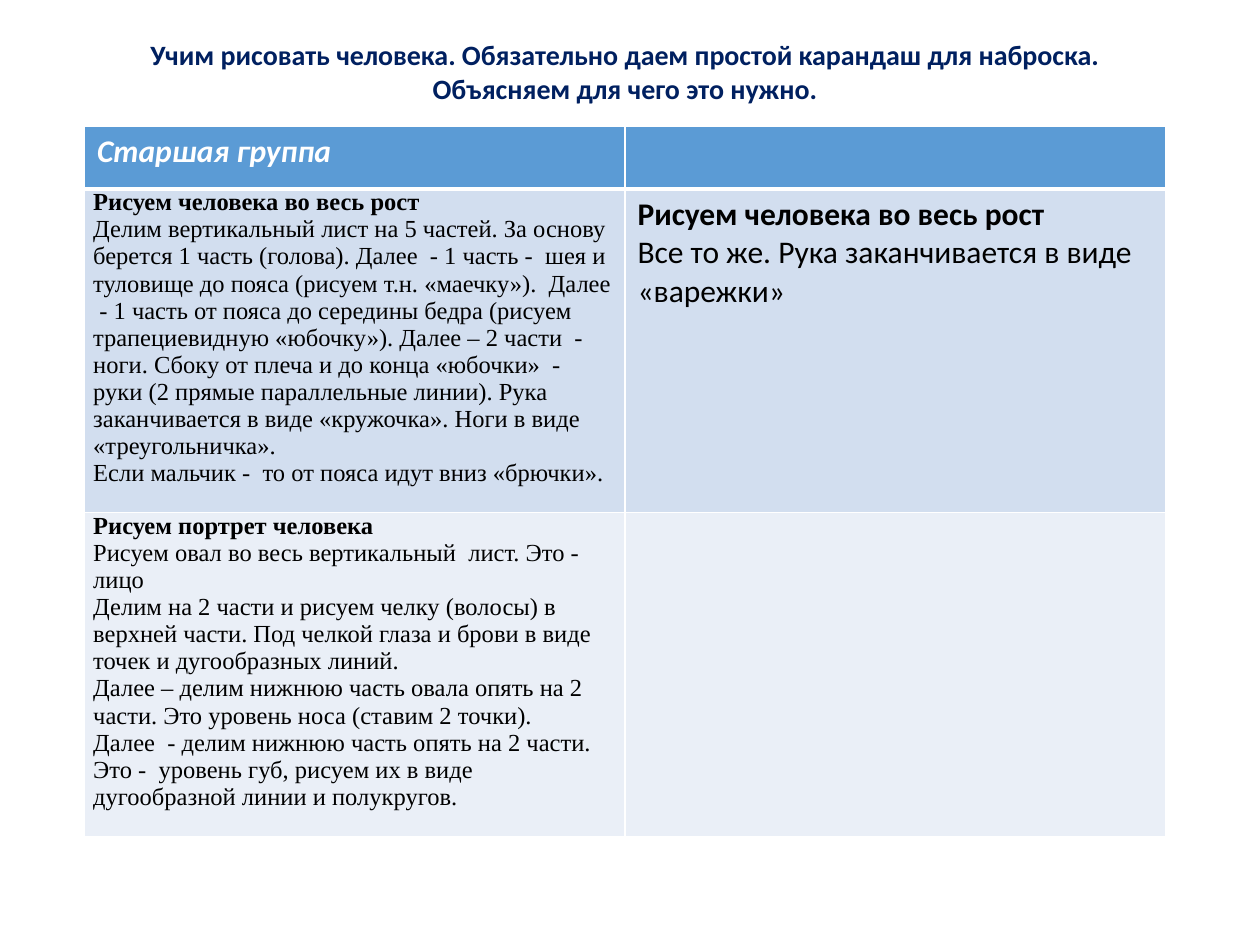
import pptx
import pptx.dml.color
import pptx.enum.text
import pptx.oxml
import pptx.util
from pptx.oxml.ns import nsdecls

WIDTH, HEIGHT = 10, 7.5
TITLE = ("Учим рисовать человека. Обязательно даем простой карандаш для наброска. "
         "Объясняем для чего это нужно.")
FULL_HEIGHT = "Рисуем человека во весь рост"
TITLE_FORMAT = {"name": "Calibri", "size": 16, "color": "002060", "bold": True}
HEAD_FORMAT = {"name": "Calibri", "size": 18, "color": "FFFFFF", "bold": True, "italic": True}
NOTE_FORMAT = {"name": "Calibri", "size": 18, "color": "000000", "bold": False}
LESSON_FORMAT = {"name": "Times New Roman", "size": 14, "color": "000000", "bold": False}
TIGHT = {"margin_left": 0.07, "margin_right": 0.07, "margin_top": 0, "margin_bottom": 0}
ROWS = [
    {"height": 0.5, "fill": "5B9BD5", "top": 1, "bottom": 3, "cells": [
        (["Старшая группа"], HEAD_FORMAT, {}),
        ([], HEAD_FORMAT, {}),
    ]},
    {"height": 2.36, "fill": "D2DEEF", "top": 3, "bottom": 1, "cells": [
        ([FULL_HEIGHT,
          "Делим вертикальный лист на 5 частей. За основу берется 1 часть (голова). "
          "Далее  - 1 часть -  шея и туловище до пояса (рисуем т.н. «маечку»).  "
          "Далее  - 1 часть от пояса до середины бедра (рисуем трапециевидную «юбочку»). "
          "Далее – 2 части  - ноги. Сбоку от плеча и до конца «юбочки»  -  "
          "руки (2 прямые параллельные линии). Рука заканчивается в виде «кружочка». "
          "Ноги в виде «треугольничка».",
          "Если мальчик -  то от пояса идут вниз «брючки»."], LESSON_FORMAT, TIGHT),
        ([FULL_HEIGHT, "Все то же. Рука заканчивается в виде «варежки»"], NOTE_FORMAT, {}),
    ]},
    {"height": 2.36, "fill": "EAEFF7", "top": 1, "bottom": 1, "cells": [
        (["Рисуем портрет человека",
          "Рисуем овал во весь вертикальный  лист. Это -  лицо",
          "Делим на 2 части и рисуем челку (волосы) в верхней части. "
          "Под челкой глаза и брови в виде точек и дугообразных линий.",
          "Далее – делим нижнюю часть овала опять на 2 части. "
          "Это уровень носа (ставим 2 точки).",
          "Далее  - делим нижнюю часть опять на 2 части. Это -  уровень губ, "
          "рисуем их в виде дугообразной линии и полукругов."], LESSON_FORMAT, TIGHT),
        ([], NOTE_FORMAT, {}),
    ]},
]


def rgb(value):
    return pptx.dml.color.RGBColor.from_string(value)


def add_span(para, text, style):
    span = para.add_run()
    span.text = text
    for key, value in style.items():
        if key == "color":
            span.font.color.rgb = rgb(value)
        else:
            setattr(span.font, key, pptx.util.Pt(value) if key == "size" else value)


def fill_text(frame, texts, style):
    for index, text in enumerate(texts):
        para = frame.add_paragraph() if index else frame.paragraphs[0]
        add_span(para, text, style if index else {**style, "bold": True})


def set_borders(cell, top, bottom):
    properties = cell._tc.get_or_add_tcPr()
    for index, (side, width) in enumerate(zip("LRTB", (1, 1, top, bottom))):
        properties.insert(index, pptx.oxml.parse_xml(
            f'<a:ln{side} {nsdecls("a")} w="{pptx.util.Pt(width)}"><a:solidFill>'
            f'<a:srgbClr val="FFFFFF"/></a:solidFill></a:ln{side}>'))


def add_title(page, box):
    frame = page.shapes.add_textbox(*box).text_frame
    frame.word_wrap = True
    fill_text(frame, [TITLE], TITLE_FORMAT)
    frame.paragraphs[0].alignment = pptx.enum.text.PP_ALIGN.CENTER


def add_lessons(page, box):
    table = page.shapes.add_table(len(ROWS), 2, *box).table
    for row_index, row in enumerate(ROWS):
        table.rows[row_index].height = pptx.util.Inches(row["height"])
        for column_index, (texts, style, margins) in enumerate(row["cells"]):
            cell = table.cell(row_index, column_index)
            cell.fill.solid()
            cell.fill.fore_color.rgb = rgb(row["fill"])
            for key, value in margins.items():
                setattr(cell, key, pptx.util.Inches(value))
            set_borders(cell, row["top"], row["bottom"])
            fill_text(cell.text_frame, texts, style)


def main():
    deck = pptx.Presentation()
    deck.slide_width = pptx.util.Inches(WIDTH)
    deck.slide_height = pptx.util.Inches(HEIGHT)
    page = deck.slides.add_slide(deck.slide_layouts[6])
    left, width = pptx.util.Inches(0.67), pptx.util.Inches(8.58)
    add_title(page, (left, deck.slide_height // 30, width, pptx.util.Inches(5.92)))
    table_height = pptx.util.Inches(sum(row["height"] for row in ROWS))
    add_lessons(page, (left, pptx.util.Inches(1), width, table_height))
    deck.save("out.pptx")


if __name__ == "__main__":
    main()
